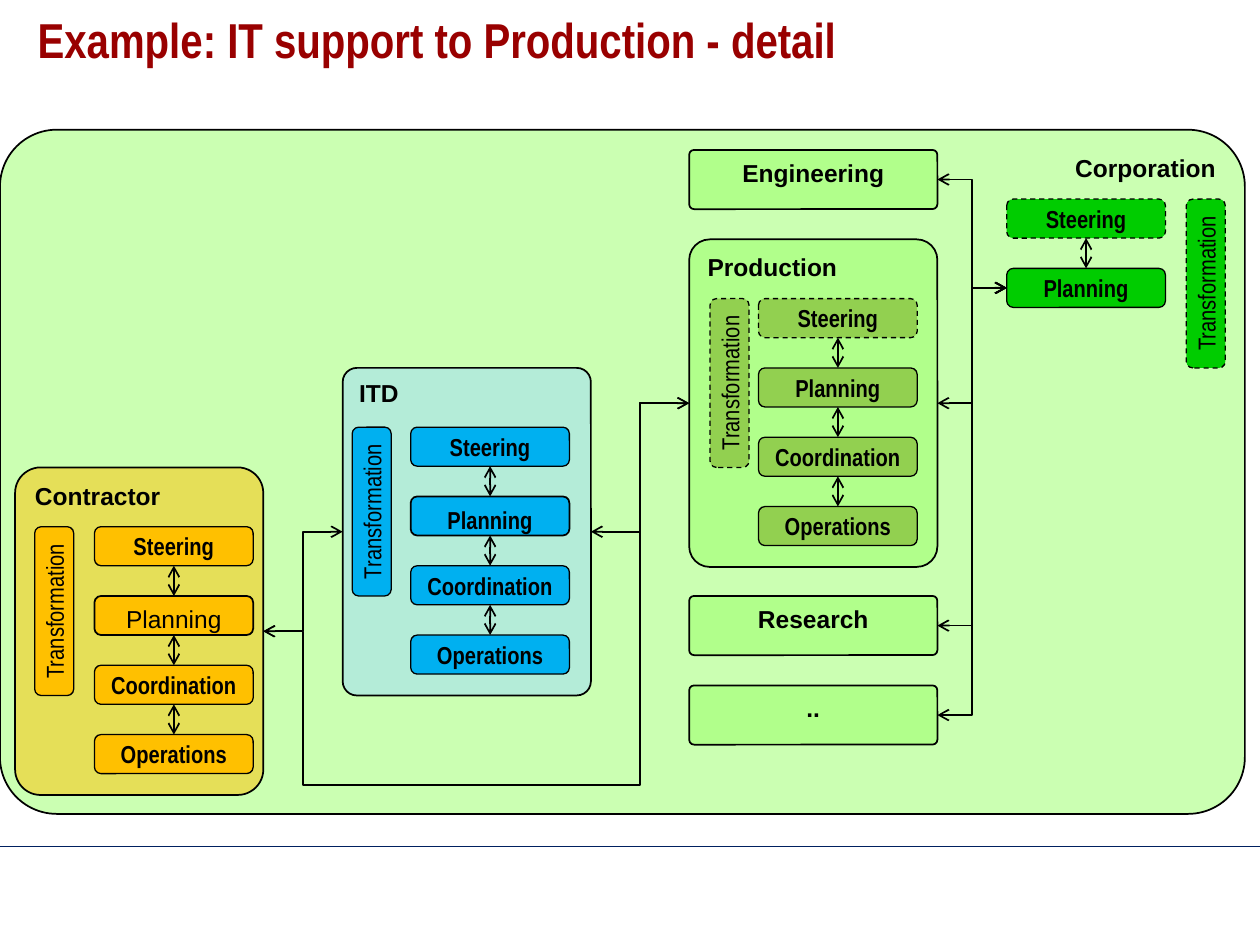
from lxml.etree import SubElement
from pptx import Presentation
from pptx.dml.color import RGBColor
from pptx.enum.dml import MSO_LINE
from pptx.enum.shapes import MSO_CONNECTOR, MSO_SHAPE
from pptx.enum.text import MSO_ANCHOR, PP_ALIGN
from pptx.oxml.ns import qn
from pptx.util import Inches, Pt

BLACK = RGBColor(0, 0, 0)
MAROON = RGBColor(0x99, 0, 0)
NAVY = RGBColor(0, 0x20, 0x60)
LIME = RGBColor(0x99, 0xFF, 0x66)
SKY = RGBColor(0x9E, 0xDB, 0xFF)
AMBER = RGBColor(0xFF, 0xC0, 0)
BLUE = RGBColor(0, 0xB0, 0xF0)
OLIVE = RGBColor(0x92, 0xD0, 0x50)
GREEN = RGBColor(0, 0xCC, 0)

TITLE = "Example: IT support to Production - detail"
LEVELS = ["Steering", "Planning", "Coordination", "Operations"]
SIDE = "Transformation"
CORPORATION = dict(name="Corporation", box=(0, 1.03, 9.88, 5.43), corner=0.083, tint=LIME,
                   align=PP_ALIGN.RIGHT, color=GREEN, stack=(7.99, 1.58), levels=2,
                   side=9.57, dashed=("Steering", SIDE))
UNITS = [
    dict(name="Production", at=(5.47, 1.9), corner=0.083, tint=LIME, color=OLIVE,
         stack_dx=0.55, side_dx=0.32, dashed=("Steering", SIDE)),
    dict(name="ITD", at=(2.72, 2.92), corner=0.057, tint=SKY, color=BLUE,
         stack_dx=0.54, side_dx=0.23, top_planning=dict(font="Arial Narrow", bold=True)),
    dict(name="Contractor", at=(0.12, 3.71), corner=0.103, tint=AMBER, color=AMBER,
         stack_dx=0.63, side_dx=0.31, top_planning=dict(font="Arial", bold=False)),
]
DEPARTMENTS = [("Engineering", 1.19), ("Research", 4.73), ("..", 5.44)]

UNIT_W, UNIT_H, DEPARTMENT_H = 1.97, 2.6, 0.47
LEVEL_W, LEVEL_H, LEVEL_STEP, SIDE_LENGTH = 1.26, 0.31, 0.55, 1.34
STACK_DY = 0.47
BUS_Y = 6.23
TOP, LEFT, BOTTOM, RIGHT = range(4)

prs = Presentation()
prs.slide_width, prs.slide_height = Inches(10), Inches(7.5)
slide = prs.slides.add_slide(prs.slide_layouts[6])


def write(shape, text, font="Arial", bold=True, size=14, color=BLACK, align=PP_ALIGN.LEFT,
          wrap=True, anchor=MSO_ANCHOR.TOP, inset=True):
    frame = shape.text_frame
    margin_x, margin_y = (Inches(0.1), Inches(0.05)) if inset else (0, 0)
    layout = dict(word_wrap=wrap, vertical_anchor=anchor, margin_left=margin_x,
                  margin_right=margin_x, margin_top=margin_y, margin_bottom=margin_y)
    for key, value in layout.items():
        setattr(frame, key, value)
    paragraph = frame.paragraphs[0]
    paragraph.text, paragraph.alignment = text, align
    for key, value in dict(name=font, bold=bold, size=Pt(size)).items():
        setattr(paragraph.font, key, value)
    paragraph.font.color.rgb = color
    return paragraph


def rounded(box, corner, fill, weight, alpha=None, dashed=False):
    shape = slide.shapes.add_shape(MSO_SHAPE.ROUNDED_RECTANGLE, *map(Inches, box))
    shape.adjustments[0] = corner
    shape.shadow.inherit = False
    shape.fill.solid()
    shape.fill.fore_color.rgb = fill
    if alpha:
        tone = shape.fill._xPr.find(qn("a:solidFill"))[0]
        SubElement(tone, qn("a:alpha")).set("val", str(alpha * 1000))
    shape.line.color.rgb = BLACK
    shape.line.width = Pt(weight)
    if dashed:
        shape.line.dash_style = MSO_LINE.DASH
    return shape


def panel(box, name, corner, tint, align=PP_ALIGN.LEFT):
    shape = rounded(box, corner, tint, 1, alpha=50)
    write(shape, name, align=align, wrap=False)
    return shape


def link(begin, end, kind=MSO_CONNECTOR.ELBOW, weight=1.0, color=BLACK, ends=("head", "tail")):
    points = [(0, 0) if hasattr(p[0], "shape_id") else p for p in (begin, end)]
    connector = slide.shapes.add_connector(kind, *(Inches(v) for point in points for v in point))
    for target, join in ((begin, connector.begin_connect), (end, connector.end_connect)):
        if hasattr(target[0], "shape_id"):
            join(*target)
    connector.line.color.rgb = color
    connector.line.width = Pt(weight)
    for side in ends:
        SubElement(connector.line._get_or_add_ln(), qn(f"a:{side}End")).set("type", "arrow")
    SubElement(connector._element.spPr, qn("a:effectLst"))


def stack(left, top, side_center, color, levels=len(LEVELS), dashed=(), top_planning=None):
    narrow = dict(font="Arial Narrow", align=PP_ALIGN.CENTER)
    middle = dict(narrow, anchor=MSO_ANCHOR.MIDDLE, inset=False)
    boxes = []
    for row, level in enumerate(LEVELS[:levels]):
        special = top_planning if level == "Planning" else None
        box = (left, top + row * LEVEL_STEP, LEVEL_W, LEVEL_H)
        shape = rounded(box, 0.167, color, 1 if special else 0.75, dashed=level in dashed)
        write(shape, level, **(dict(narrow, **special) if special else middle))
        boxes.append(shape)
    for upper, lower in zip(boxes, boxes[1:]):
        link((upper, BOTTOM), (lower, TOP), MSO_CONNECTOR.STRAIGHT)
    box = (side_center - SIDE_LENGTH / 2, top + (SIDE_LENGTH - LEVEL_H) / 2, SIDE_LENGTH, LEVEL_H)
    side = rounded(box, 0.167, color, 0.75, dashed=SIDE in dashed)
    side.rotation = 270
    write(side, SIDE, **dict(middle, bold=False))
    return boxes


link((0, 6.72), (10, 6.72), MSO_CONNECTOR.STRAIGHT, 0.75, NAVY, ())
heading = slide.shapes.add_textbox(*map(Inches, (0.2, 0.08, 9.61, 0.83)))
write(heading, TITLE, "Arial Narrow", size=28, color=MAROON).line_spacing = 0.9

corp = CORPORATION
panel(corp["box"], corp["name"], corp["corner"], corp["tint"], corp["align"])
corp_levels = stack(*corp["stack"], corp["side"], corp["color"], corp["levels"], corp["dashed"])

panels = {}
for unit in UNITS:
    x, y = unit["at"]
    panels[unit["name"]] = panel((x, y, UNIT_W, UNIT_H), unit["name"], unit["corner"], unit["tint"])
    stack(x + unit["stack_dx"], y + STACK_DY, x + unit["side_dx"], unit["color"],
          dashed=unit.get("dashed", ()), top_planning=unit.get("top_planning"))

production_x = UNITS[0]["at"][0]
for name, y in DEPARTMENTS:
    panels[name] = panel((production_x, y, UNIT_W, DEPARTMENT_H), name, 0.083, LIME, PP_ALIGN.CENTER)

for name in ["Production"] + [name for name, _ in DEPARTMENTS]:
    link((corp_levels[1], LEFT), (panels[name], RIGHT))
link((panels["Production"], LEFT), (panels["ITD"], RIGHT))
link((panels["ITD"], LEFT), (panels["Contractor"], RIGHT))

bus_left = UNITS[1]["at"][0]
bus_right = bus_left + UNIT_W
link((bus_right, BUS_Y), (panels["Production"], LEFT), weight=0.75, ends=("tail",))
link((bus_left, BUS_Y), (panels["Contractor"], RIGHT), weight=0.75, ends=("tail",))
link((bus_left, BUS_Y), (bus_right, BUS_Y), MSO_CONNECTOR.STRAIGHT, 0.75, ends=())

prs.save("out.pptx")
